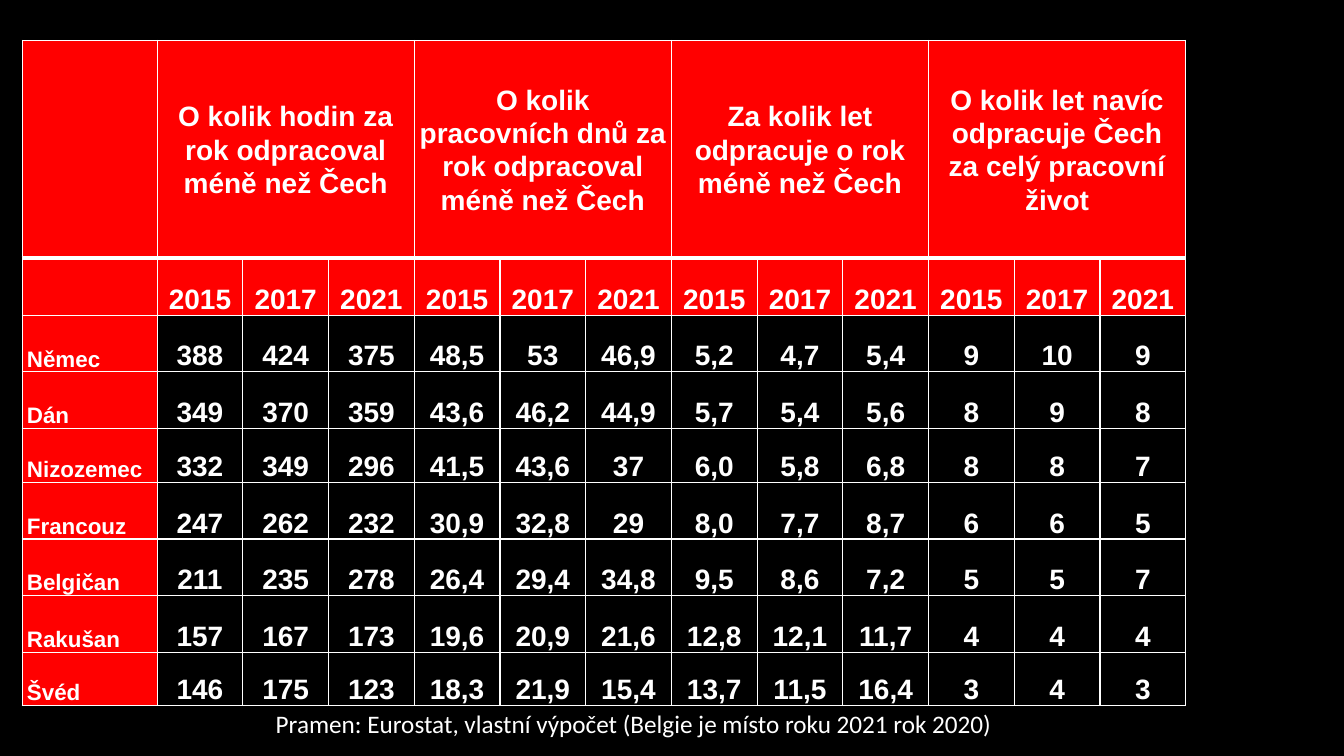
from dataclasses import dataclass

from pptx import Presentation
from pptx.dml.color import RGBColor
from pptx.enum.text import MSO_ANCHOR, MSO_AUTO_SIZE, PP_ALIGN
from pptx.oxml import parse_xml
from pptx.oxml.ns import nsdecls
from pptx.util import Cm, Pt


@dataclass(frozen=True)
class Theme:
    background: str = "000000"
    header: str = "FF0000"
    text: str = "FFFFFF"
    border: str = "FFFFFF"
    table_font: str = "Arial"
    source_font: str = "Calibri"
    value_size: int = 20
    country_size: int = 16
    source_size: int = 18
    border_width: float = 1
    header_border_width: float = 3


THEME = Theme()
YEARS = ["2015", "2017", "2021"]
QUESTIONS = [
    "O kolik hodin za rok odpracoval méně než Čech",
    "O kolik pracovních dnů za rok odpracoval méně než Čech",
    "Za kolik let odpracuje o rok méně než Čech",
    "O kolik let navíc odpracuje Čech za celý pracovní život",
]
COUNTRIES = {
    "Němec": "388 424 375 48,5 53 46,9 5,2 4,7 5,4 9 10 9",
    "Dán": "349 370 359 43,6 46,2 44,9 5,7 5,4 5,6 8 9 8",
    "Nizozemec": "332 349 296 41,5 43,6 37 6,0 5,8 6,8 8 8 7",
    "Francouz": "247 262 232 30,9 32,8 29 8,0 7,7 8,7 6 6 5",
    "Belgičan": "211 235 278 26,4 29,4 34,8 9,5 8,6 7,2 5 5 7",
    "Rakušan": "157 167 173 19,6 20,9 21,6 12,8 12,1 11,7 4 4 4",
    "Švéd": "146 175 123 18,3 21,9 15,4 13,7 11,5 16,4 3 4 3",
}
SOURCE = "Pramen: Eurostat, vlastní výpočet (Belgie je místo roku 2021 rok 2020)"
COLUMN_WIDTHS = [3.4] + [2.16] * len(YEARS) * len(QUESTIONS)
ROW_HEIGHTS = [5.49, 1.43, 1.43, 1.43, 1.35, 1.43, 1.43, 1.43, 1.33]


def apply_format(target, values):
    for name, value in values.items():
        setattr(target, name, value)


def format_font(font, name, size, bold):
    apply_format(font, {"name": name, "size": Pt(size), "bold": bold})
    font.color.rgb = RGBColor.from_string(THEME.text)


def set_borders(cell, top, bottom):
    properties = cell._tc.get_or_add_tcPr()
    widths = {"L": THEME.border_width, "R": THEME.border_width, "T": top, "B": bottom}
    for side, width in widths.items():
        properties.append(parse_xml(
            f'<a:ln{side} {nsdecls("a")} w="{Pt(width)}"><a:solidFill>'
            f'<a:srgbClr val="{THEME.border}"/></a:solidFill></a:ln{side}>'))


def format_cell(cell, row, column):
    """Style a cell by its place: question row, year row, country column or value."""
    set_borders(
        cell,
        top=THEME.header_border_width if row == 1 else THEME.border_width,
        bottom=THEME.header_border_width if row == 0 else THEME.border_width)
    cell.fill.solid()
    is_header = row < 2 or column == 0
    cell.fill.fore_color.rgb = RGBColor.from_string(
        THEME.header if is_header else THEME.background)
    apply_format(cell, {
        "margin_left": Cm(0.12), "margin_right": Cm(0.12),
        "margin_top": 0, "margin_bottom": 0,
        "vertical_anchor": MSO_ANCHOR.MIDDLE if row == 0 else MSO_ANCHOR.BOTTOM})
    paragraph = cell.text_frame.paragraphs[0]
    apply_format(paragraph, {
        "alignment": PP_ALIGN.LEFT if column == 0 else PP_ALIGN.CENTER,
        "line_spacing": 1.07, "space_after": Pt(8)})
    size = THEME.country_size if column == 0 else THEME.value_size
    format_font(paragraph.font, THEME.table_font, size, True)
    for run in paragraph.runs:
        format_font(run.font, THEME.table_font, size, True)


def table_rows():
    questions = [""]
    for question in QUESTIONS:
        questions += [question] + [""] * (len(YEARS) - 1)
    countries = [[name] + values.split() for name, values in COUNTRIES.items()]
    return [questions, [""] + YEARS * len(QUESTIONS)] + countries


def add_comparison_table(slide):
    table = slide.shapes.add_table(
        len(ROW_HEIGHTS), len(COLUMN_WIDTHS), Cm(0.56), Cm(1.02),
        Cm(sum(COLUMN_WIDTHS)), Cm(sum(ROW_HEIGHTS))).table
    apply_format(table, {"first_row": False, "horz_banding": False})
    for column, width in zip(table.columns, COLUMN_WIDTHS):
        column.width = Cm(width)
    for row, height in zip(table.rows, ROW_HEIGHTS):
        row.height = Cm(height)
    for row, texts in enumerate(table_rows()):
        for column, text in enumerate(texts):
            cell = table.cell(row, column)
            cell.text = text
            format_cell(cell, row, column)
    for first in range(1, len(COLUMN_WIDTHS), len(YEARS)):
        table.cell(0, first).merge(table.cell(0, first + len(YEARS) - 1))


def add_source(slide):
    frame = slide.shapes.add_textbox(Cm(6.7), Cm(17.73), Cm(21.6), Cm(1.03)).text_frame
    apply_format(frame, {"word_wrap": True, "auto_size": MSO_AUTO_SIZE.SHAPE_TO_FIT_TEXT})
    run = frame.paragraphs[0].add_run()
    run.text = SOURCE
    format_font(run.font, THEME.source_font, THEME.source_size, False)


def main():
    presentation = Presentation()
    apply_format(presentation, {"slide_width": Cm(33.87), "slide_height": Cm(19.05)})
    slide = presentation.slides.add_slide(presentation.slide_layouts.get_by_name("Blank"))
    slide.background.fill.solid()
    slide.background.fill.fore_color.rgb = RGBColor.from_string(THEME.background)
    add_comparison_table(slide)
    add_source(slide)
    presentation.save("out.pptx")


if __name__ == "__main__":
    main()
